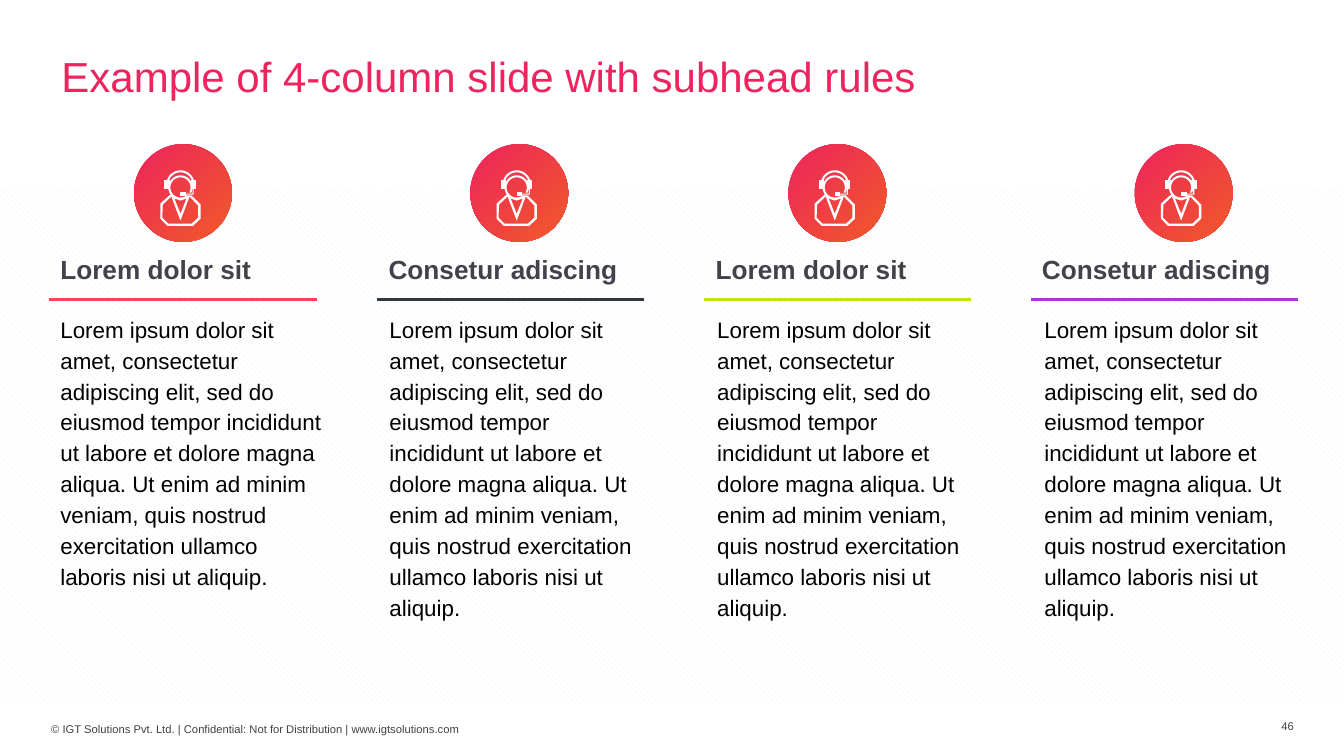
from collections import namedtuple
from math import cos, radians, sin

from lxml import etree
from pptx import Presentation
from pptx.dml.color import RGBColor
from pptx.enum import dml, shapes, text
from pptx.oxml import ns
from pptx.util import Inches, Pt

# Grid of 133.3 columns by 75 rows, each cell a tenth of an inch
COLS, ROWS = 133.3, 75
LEFT, PITCH, WIDE = 4.9, 32.45, 26.5      # the four columns
ICON_TOP, ICON = 14.3, 9.7                # the round badges
HEAD_TOP, RULE_TOP, BODY_TOP = 23.7, 29.7, 29.95

HUES = {
    "pink": "ED245D", "orange": "F15A29", "head": "42424D", "body": "000000",
    "foot": "414042", "stripe": "F2F2F2", "white": "FFFFFF",
    "red": "FF415A", "slate": "32383F", "lime": "C3E408", "purple": "A13CD3",
}
LOREM = ("Lorem ipsum dolor sit amet, consectetur adipiscing elit, sed do eiusmod "
         "tempor incididunt ut labore et dolore magna aliqua. Ut enim ad minim "
         "veniam, quis nostrud exercitation ullamco laboris nisi ut aliquip.")

# Shifts are measured from the left end of the column's rule
Column = namedtuple("Column", "head color icon_in head_in body_in body_wide")
COLUMNS = [
    Column("Lorem dolor sit", "red", 8.4, 0.1, 0.1, 27.9),
    Column("Consetur adiscing", "slate", 9.3, 0.2, 0.3, 27.7),
    Column("Lorem dolor sit", "lime", 8.4, 0.2, 0.35, 27.7),
    Column("Consetur adiscing", "purple", 10.3, 0.1, 0.35, 27.7),
]


def cell(n):
    return Inches(n / 10)


def hue(name):
    return RGBColor.from_string(HUES[name])


# Text
def style(frame, words, size, color, bold=False, pad=0.5, line=None):
    frame.text = words
    frame.word_wrap = True
    frame.auto_size = text.MSO_AUTO_SIZE.NONE
    frame.vertical_anchor = text.MSO_ANCHOR.TOP
    frame.margin_left = frame.margin_right = cell(1)
    frame.margin_top = frame.margin_bottom = cell(pad)
    para = frame.paragraphs[0]
    para.alignment = text.PP_ALIGN.LEFT
    para.line_spacing = line
    font = para.runs[0].font
    font.name, font.size, font.bold = "Arial", Pt(size), bold
    font.color.rgb = hue(color)


def label(slide, box, words, size, color, **more):
    area = slide.shapes.add_textbox(*map(cell, box))
    style(area.text_frame, words, size, color, **more)


# Headset figure: points in cells, x from its axis and y from the badge's top
def arc(radius, mid, start, end, steps=40):
    turns = [radians(start + (end - start) * i / steps) for i in range(steps + 1)]
    return [(radius * cos(t), mid + radius * sin(t)) for t in turns]


def block(x, y, w, h):
    return [(x, y), (x + w, y), (x + w, y + h), (x, y + h)]


def agent():
    """Return the figure's parts, each an outline followed by its holes."""
    band = arc(1.4, 4, 180, 360) + arc(1.2, 4, 360, 180)
    person = (arc(1, 4.3, 53, 390) + arc(1.2, 4.3, 25, -215)
              + [(-2, 5.9), (-2, 7.4), (-1.3, 8.1), (1.25, 8.1),
                 (2, 7.4), (2, 6), (1.1, 5.1)])
    shirt = [(-0.6, 5.4), (0, 5.6), (0.6, 5.4), (0, 6.9)]
    coat = [(1.75, 7.3), (1.1, 7.9), (-1.2, 7.9), (-1.8, 7.3), (-1.75, 6),
            (-0.9, 5.2), (0, 7.6), (0.9, 5.2), (1.75, 6.1)]
    ears = [block(x, 3.6, 0.55, 0.85) for x in (-1.6, 1)]
    boom = [(1.2, 4.2), (1.2, 4.9), (0.2, 4.9), (0.2, 5), (1.3, 5), (1.3, 4.2)]
    mouth = block(0, 4.75, 0.55, 0.35)
    return [[band], [person, shirt, coat], *([ear] for ear in ears),
            [boom], [mouth]]


def outline(group, axis, top, loops):
    first, *holes = [[(cell(axis + x), cell(top + y)) for x, y in loop]
                     for loop in loops]
    pen = group.shapes.build_freeform(*first[0])
    pen.add_line_segments(first[1:], close=True)
    for hole in holes:
        pen.move_to(*hole[0])
        pen.add_line_segments(hole[1:], close=True)
    part = pen.convert_to_shape()
    part.shadow.inherit = False
    part.line.fill.background()
    part.fill.solid()
    part.fill.fore_color.rgb = hue("white")


def badge(slide, x, y, size):
    group = slide.shapes.add_group_shape()
    disc = group.shapes.add_shape(shapes.MSO_SHAPE.OVAL,
                                  *map(cell, (x, y, size, size)))
    disc.shadow.inherit = False
    disc.line.fill.background()
    disc.fill.gradient()
    disc.fill.gradient_angle = 315
    for stop, name in zip(disc.fill.gradient_stops, ("pink", "orange")):
        stop.color.rgb = hue(name)
    axis = x + size / 2 - 0.25
    for loops in agent():
        outline(group, axis, y, loops)


# One column: body, heading, rule and badge
def rule(slide, x, y, wide, color):
    line = slide.shapes.add_connector(shapes.MSO_CONNECTOR.STRAIGHT,
                                      *map(cell, (x, y, x + wide, y)))
    line.line.color.rgb = hue(color)
    line.line.width = Pt(2.25)
    etree.SubElement(line._element.spPr, ns.qn("a:effectLst"))


def column(slide, x, item):
    label(slide, (x + item.body_in, BODY_TOP, item.body_wide, 39.2),
          LOREM, 16, "body", pad=1, line=1.15)
    label(slide, (x + item.head_in, HEAD_TOP, 27.9, 5.4),
          item.head, 18.7, "head", bold=True, pad=1, line=1.15)
    rule(slide, x, RULE_TOP, WIDE, item.color)
    badge(slide, x + item.icon_in, ICON_TOP, ICON)


# Regions around the columns
def backdrop(slide, box):
    band = slide.shapes.add_shape(shapes.MSO_SHAPE.RECTANGLE, *map(cell, box))
    band.shadow.inherit = False
    band.line.fill.background()
    band.fill.patterned()
    band.fill.pattern = dml.MSO_PATTERN.WIDE_DOWNWARD_DIAGONAL
    band.fill.fore_color.rgb = hue("stripe")
    band.fill.back_color.rgb = hue("white")


def heading(slide, box, words):
    title = slide.shapes.title
    title.left, title.top, title.width, title.height = map(cell, box)
    style(title.text_frame, words, 30, "pink", line=0.9)


def footer(slide):
    label(slide, (4.1, 71.2, 106.4, 3), "© IGT Solutions Pvt. Ltd. | Confidential: "
          "Not for Distribution | www.igtsolutions.com", 8, "foot")
    label(slide, (126.1, 70.9, 4.4, 3), "46", 8, "foot")


def main():
    deck = Presentation()
    deck.slide_width, deck.slide_height = cell(COLS), cell(ROWS)
    slide = deck.slides.add_slide(deck.slide_layouts[5])
    footer(slide)
    backdrop(slide, (0, 18.8, COLS, 51.1))
    heading(slide, (5.1, 5.1, 123.2, 7.6),
            "Example of 4-column slide with subhead rules")
    for i, item in enumerate(COLUMNS):
        column(slide, LEFT + i * PITCH, item)
    deck.save("out.pptx")


if __name__ == "__main__":
    main()
